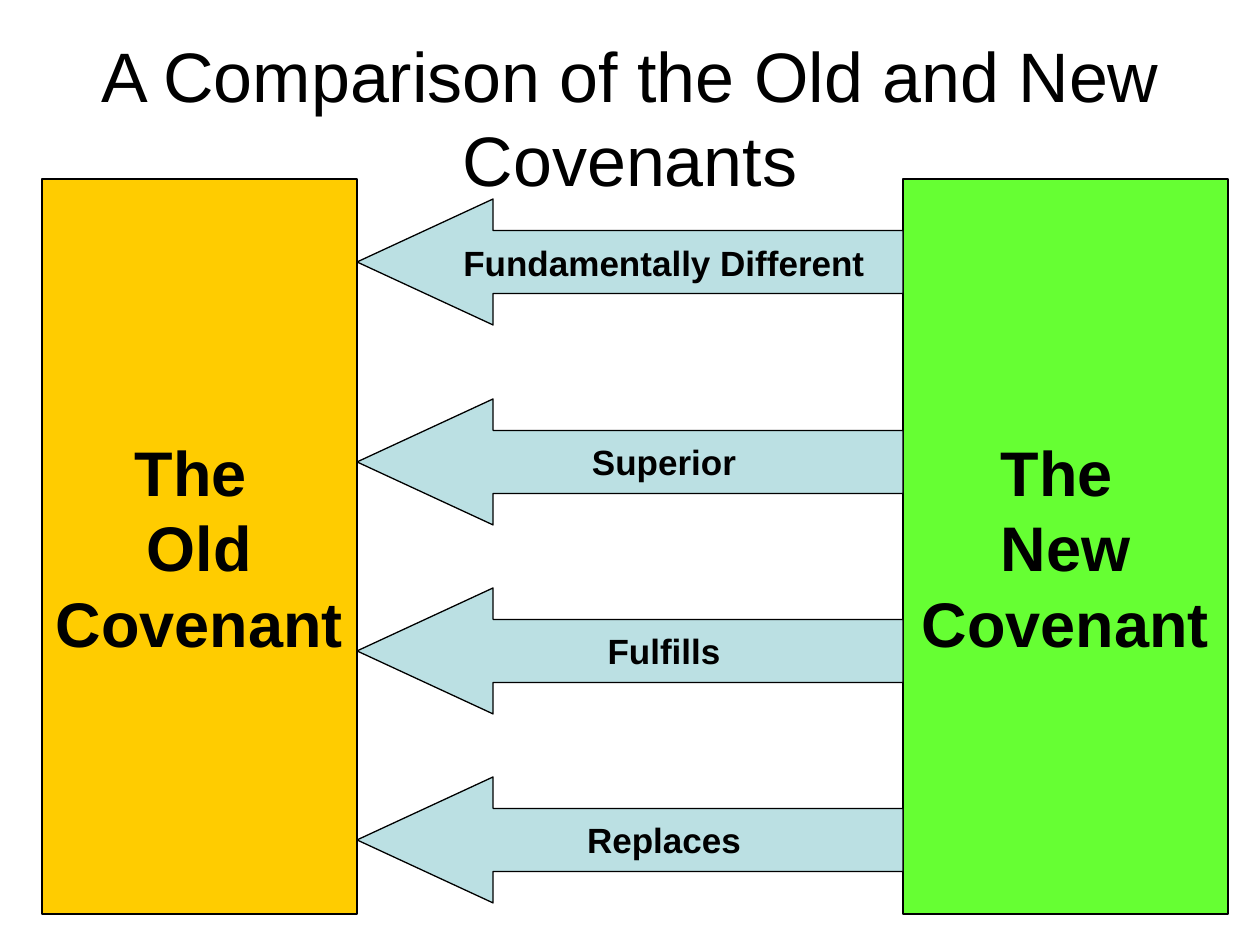
import pptx
import pptx.util
import pptx.dml.color
import pptx.enum.shapes
import pptx.enum.text

RGB = pptx.dml.color.RGBColor
KIND = pptx.enum.shapes.MSO_SHAPE
ALIGN = pptx.enum.text.PP_ALIGN
ANCHOR = pptx.enum.text.MSO_ANCHOR
FIT = pptx.enum.text.MSO_AUTO_SIZE

BLACK = RGB(0x00, 0x00, 0x00)
GOLD = RGB(0xFF, 0xCC, 0x00)
GREEN = RGB(0x66, 0xFF, 0x33)
TEAL = RGB(0xBB, 0xE0, 0xE3)

SCALE = 914400 / 126


def px(n):
    return pptx.util.Emu(round(n * SCALE))


def write(shape, lines, size, bold, wrap=True):
    frame = shape.text_frame
    frame.text = "\n".join(lines)
    frame.auto_size = FIT.NONE
    frame.word_wrap = wrap
    frame.vertical_anchor = ANCHOR.MIDDLE
    look = {"name": "Arial", "size": pptx.util.Pt(size), "bold": bold}
    for para in frame.paragraphs:
        para.alignment = ALIGN.CENTER
        for run in para.runs:
            for key, value in look.items():
                setattr(run.font, key, value)
            run.font.color.rgb = BLACK


def block(slide, kind, box, fill):
    """Add a flat filled shape with a thin black outline."""
    shape = slide.shapes.add_shape(kind, *map(px, box))
    shape.shadow.inherit = False
    shape.fill.solid()
    shape.fill.fore_color.rgb = fill
    shape.line.color.rgb = BLACK
    shape.line.width = pptx.util.Pt(0.75)
    return shape


def title(slide, box, text):
    head = slide.shapes.title
    for key, value in zip(("left", "top", "width", "height"), box):
        setattr(head, key, px(value))
    write(head, [text], 40, False)


def panel(slide, box, fill, name):
    shape = block(slide, KIND.RECTANGLE, box, fill)
    write(shape, ["The ", name + " Covenant"], 36, True)


def arrows(slide, box, labels):
    """Stack arrows at an even step; the first sits a little higher."""
    left, top, width, height = box
    tall, lift = 126, 11
    step = (height - tall) // (len(labels) - 1)
    for i, label in enumerate(labels):
        y = top + i * step - (lift if i == 0 else 0)
        shape = block(slide, KIND.LEFT_ARROW, (left, y, width, tall), TEAL)
        shape.adjustments[0] = 0.5
        shape.adjustments[1] = 1.08
        write(shape, [label], 20, True, wrap=False)


def main():
    deck = pptx.Presentation()
    deck.slide_width, deck.slide_height = px(1260), px(945)
    slide = deck.slides.add_slide(deck.slide_layouts[5])
    title(slide, (63, 38, 1134, 157),
          "A Comparison of the Old and New Covenants")
    panel(slide, (42, 179, 315, 735), GOLD, "Old")
    panel(slide, (903, 179, 325, 735), GREEN, "New")
    arrows(slide, (357, 210, 546, 693),
           ["Fundamentally Different", "Superior", "Fulfills", "Replaces"])
    deck.save("out.pptx")


if __name__ == "__main__":
    main()
